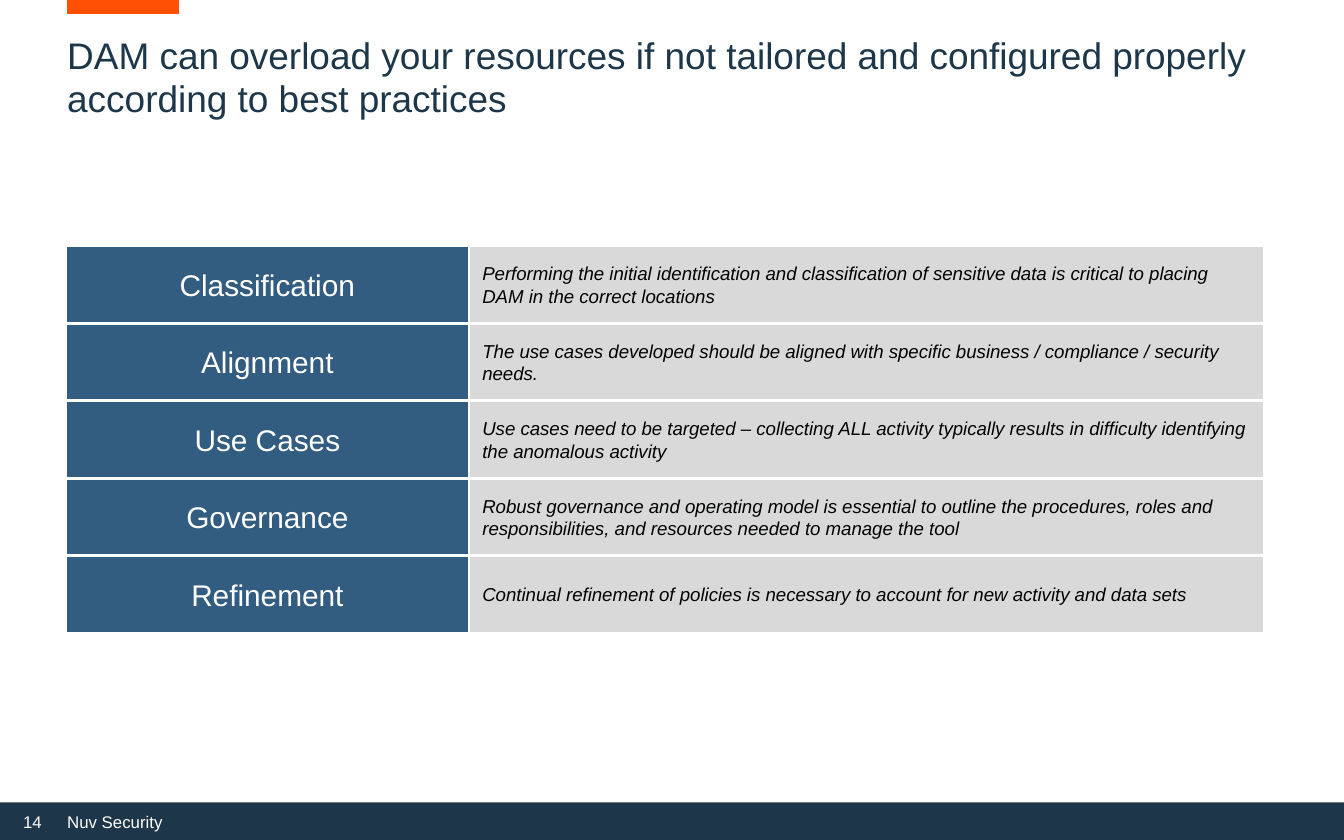
from lxml import etree
from pptx import Presentation
from pptx.dml.color import RGBColor
from pptx.enum.shapes import MSO_CONNECTOR, MSO_SHAPE
from pptx.enum.text import MSO_ANCHOR, MSO_AUTO_SIZE, PP_ALIGN
from pptx.oxml.ns import qn
from pptx.util import Inches, Pt

RECTANGLE, STRAIGHT = MSO_SHAPE.RECTANGLE, MSO_CONNECTOR.STRAIGHT
TOP, MIDDLE, BOTTOM = MSO_ANCHOR.TOP, MSO_ANCHOR.MIDDLE, MSO_ANCHOR.BOTTOM
LEFT, CENTER = PP_ALIGN.LEFT, PP_ALIGN.CENTER
NO_AUTOFIT = MSO_AUTO_SIZE.NONE

THEME = {
    "font": "Arial",
    "navy": RGBColor.from_string("1D3649"),
    "blue": RGBColor.from_string("325C80"),
    "grey": RGBColor.from_string("D9D9D9"),
    "orange": RGBColor.from_string("FF5004"),
    "white": RGBColor.from_string("FFFFFF"),
    "black": RGBColor.from_string("010203"),
    "title_size": Pt(19.8),
    "topic_size": Pt(16),
    "advice_size": Pt(10),
    "footer_size": Pt(9),
}


def style(paragraph, size, color, align=LEFT, italic=False):
    paragraph.alignment = align
    font = paragraph.font
    font.name, font.size, font.italic = THEME["font"], size, italic
    font.color.rgb = color


def add_block(left, top, width, height, fill):
    block = slide.shapes.add_shape(
        RECTANGLE, Inches(left), Inches(top), Inches(width), Inches(height))
    block.shadow.inherit = False
    block.fill.solid()
    block.fill.fore_color.rgb = fill
    return block


prs = Presentation()
prs.slide_width, prs.slide_height = Inches(10), Inches(6.25)
slide = prs.slides.add_slide(prs.slide_layouts[5])

# Footer band and top accent
footer_band = add_block(0, 5.97, 10, 0.28, THEME["navy"])
footer_band.line.fill.background()

accent = slide.shapes.add_connector(
    STRAIGHT, Inches(0.5), Inches(0.05), Inches(1.33), Inches(0.05))
accent.line.color.rgb = THEME["orange"]
accent.line.width = Pt(8)
etree.SubElement(accent._element.spPr, qn("a:effectLst"))

# Footer text: page number on a right tab, name on a left tab
footer = slide.shapes.add_textbox(
    Inches(0.12), Inches(5.99), Inches(1.91), Inches(0.2)).text_frame
footer.margin_left = footer.margin_right = 0
footer.margin_top = footer.margin_bottom = 0
footer.vertical_anchor = BOTTOM
footer.word_wrap = False
footer_line = footer.paragraphs[0]
footer_line.text = "\t14\tNuv Security"
tabs = etree.SubElement(footer_line._p.get_or_add_pPr(), qn("a:tabLst"))
for position, side in ((0.19, "r"), (0.38, "l")):
    etree.SubElement(tabs, qn("a:tab"), pos=str(Inches(position)), algn=side)
footer_line.line_spacing = 0.9
style(footer_line, THEME["footer_size"], THEME["white"])

# Title
title = slide.shapes.title
title.left, title.top = Inches(0.5), Inches(0.25)
title.width, title.height = Inches(9), Inches(0.38)
heading = title.text_frame
heading.margin_left = heading.margin_right = 0
heading.margin_top = heading.margin_bottom = 0
heading.vertical_anchor = TOP
heading.word_wrap = True
heading.auto_size = NO_AUTOFIT
heading.text = ("DAM can overload your resources if not tailored and "
                "configured properly according to best practices")
heading.paragraphs[0].line_spacing = Pt(23)
style(heading.paragraphs[0], THEME["title_size"], THEME["navy"])

# Best practices: topic on the left, advice on the right
PRACTICES = [
    ("Classification", "Performing the initial identification and classification "
     "of sensitive data is critical to placing DAM in the correct locations"),
    ("Alignment", "The use cases developed should be aligned with specific "
     "business / compliance / security needs."),
    ("Use Cases", "Use cases need to be targeted – collecting ALL activity "
     "typically results in difficulty identifying the anomalous activity"),
    ("Governance", "Robust governance and operating model is essential to outline "
     "the procedures, roles and responsibilities, and resources needed to manage "
     "the tool"),
    ("Refinement", "Continual refinement of policies is necessary to account for "
     "new activity and data sets"),
]
GRID_LEFT, GRID_TOP, ROW_HEIGHT = 0.49, 1.83, 0.576
TOPIC_WIDTH, ADVICE_WIDTH = 3, 5.92

for row, (topic, advice) in enumerate(PRACTICES):
    top = GRID_TOP + row * ROW_HEIGHT
    cells = (
        (topic, GRID_LEFT, TOPIC_WIDTH, THEME["blue"],
         THEME["topic_size"], THEME["white"], CENTER, False),
        (advice, GRID_LEFT + TOPIC_WIDTH, ADVICE_WIDTH, THEME["grey"],
         THEME["advice_size"], THEME["black"], LEFT, True),
    )
    for text, left, width, fill, size, color, align, italic in cells:
        cell = add_block(left, top, width, ROW_HEIGHT, fill)
        cell.line.color.rgb = THEME["white"]
        cell.line.width = Pt(1.5)
        cell.text_frame.word_wrap = True
        cell.text_frame.vertical_anchor = MIDDLE
        cell.text_frame.text = text
        style(cell.text_frame.paragraphs[0], size, color, align, italic)

prs.save("out.pptx")
